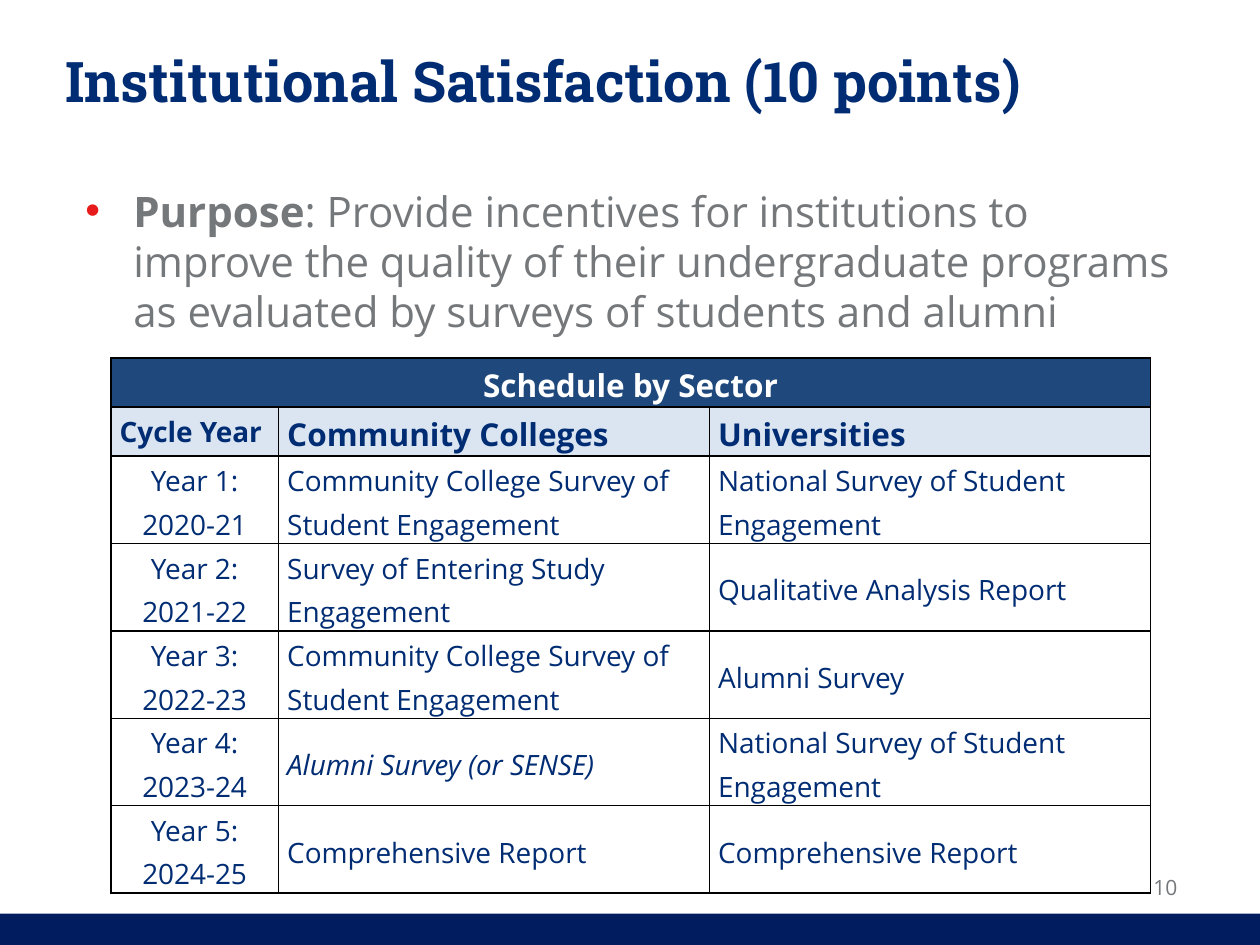
import pptx
import pptx.util
import pptx.dml.color
import pptx.enum.shapes
import pptx.enum.text
import pptx.oxml
import pptx.oxml.ns
from pptx.util import Inches

RGBColor = pptx.dml.color.RGBColor
ALIGN = pptx.enum.text.PP_ALIGN
ANCHOR = pptx.enum.text.MSO_ANCHOR

NAVY = RGBColor(0x00, 0x2C, 0x73)
FOOTER_NAVY = RGBColor(0x01, 0x1D, 0x5F)
GREY = RGBColor(0x75, 0x78, 0x7B)
WHITE = RGBColor(0xFF, 0xFF, 0xFF)
HEADER_BLUE = RGBColor(0x1F, 0x49, 0x7D)
PALE_BLUE = RGBColor(0xDB, 0xE5, 0xF1)
RED = RGBColor(0xE7, 0x1B, 0x1B)
BLACK = RGBColor(0x00, 0x00, 0x00)


def add_run(paragraph, text, size, color, name="Open Sans", bold=False, italic=False):
    run = paragraph.add_run()
    run.text = text
    run.font.color.rgb = color
    formats = {"size": pptx.util.Pt(size), "name": name, "bold": bold, "italic": italic}
    for attribute, value in formats.items():
        setattr(run.font, attribute, value)


def add_box(left, top, width, height, anchor):
    box = slide.shapes.add_textbox(Inches(left), Inches(top), Inches(width), Inches(height))
    box.text_frame.word_wrap = True
    box.text_frame.vertical_anchor = anchor
    return box.text_frame.paragraphs[0]


presentation = pptx.Presentation()
presentation.slide_width = Inches(10)
presentation.slide_height = Inches(7.5)
slide = presentation.slides.add_slide(presentation.slide_layouts[6])

# Page number and footer band
page_number = add_box(9, 6.83, 0.5, 0.42, ANCHOR.MIDDLE)
page_number.alignment = ALIGN.CENTER
add_run(page_number, "10", 12, GREY)

footer = slide.shapes.add_shape(
    pptx.enum.shapes.MSO_SHAPE.RECTANGLE, 0, Inches(7.25), Inches(10), Inches(0.25))
footer.shadow.inherit = False
footer.fill.solid()
footer.fill.fore_color.rgb = FOOTER_NAVY
footer.line.fill.background()

# Title
title = add_box(0.42, 0.01, 9, 1.25, ANCHOR.MIDDLE)
add_run(title, "Institutional Satisfaction (10 points)", 32, NAVY, "Roboto Slab", bold=True)

# Purpose bullet
purpose = add_box(0.58, 1.42, 9, 1.42, ANCHOR.TOP)
bullet = purpose._p.get_or_add_pPr()
bullet.set("marL", str(Inches(0.38)))
bullet.set("indent", str(-Inches(0.38)))
for element in (f'<a:buClr {{}}><a:srgbClr val="{RED}"/></a:buClr>',
                '<a:buFont {} typeface="Arial"/>',
                '<a:buChar {} char="•"/>'):
    bullet.append(pptx.oxml.parse_xml(element.format(pptx.oxml.ns.nsdecls("a"))))
add_run(purpose, "Purpose", 24, GREY, bold=True)
add_run(purpose, ": Provide incentives for institutions to improve the quality of their "
        "undergraduate programs as evaluated by surveys of students and alumni", 24, GREY)

# Survey schedule
CCSSE = "Community College Survey of Student Engagement"
NSSE = "National Survey of Student Engagement"
SENSE_OPTION = "Alumni Survey (or SENSE)"
schedule_rows = [
    ("Schedule by Sector", "", ""),
    ("Cycle Year", "Community Colleges", "Universities"),
    ("Year 1: 2020-21", CCSSE, NSSE),
    ("Year 2: 2021-22", "Survey of Entering Study Engagement", "Qualitative Analysis Report"),
    ("Year 3: 2022-23", CCSSE, "Alumni Survey"),
    ("Year 4: 2023-24", SENSE_OPTION, NSSE),
    ("Year 5: 2024-25", "Comprehensive Report", "Comprehensive Report"),
]
row_fills = {0: HEADER_BLUE, 1: PALE_BLUE}
schedule_height = 4.25
heading_height = 0.39
year_height = (schedule_height - 2 * heading_height) / 5
schedule = slide.shapes.add_table(
    len(schedule_rows), 3,
    Inches(0.88), Inches(2.84), Inches(8.25), Inches(schedule_height)).table
for column, width in zip(schedule.columns, (1.33, 3.42, 3.5)):
    column.width = Inches(width)
for row, height in zip(schedule.rows, [heading_height] * 2 + [year_height] * 5):
    row.height = Inches(height)
schedule.cell(0, 0).merge(schedule.cell(0, 2))

cell_format = {"margin_left": Inches(0.07), "margin_right": Inches(0.07),
               "margin_top": 0, "margin_bottom": 0}
for r, texts in enumerate(schedule_rows):
    for c, text in enumerate(texts):
        cell = schedule.cell(r, c)
        for attribute, value in cell_format.items():
            setattr(cell, attribute, value)
        cell.vertical_anchor = ANCHOR.MIDDLE if r > 1 else ANCHOR.TOP

        # Borders come before the fill in the cell properties
        for side in ("lnL", "lnR", "lnT", "lnB"):
            cell._tc.get_or_add_tcPr().append(pptx.oxml.parse_xml(
                f'<a:{side} {pptx.oxml.ns.nsdecls("a")} w="{pptx.util.Pt(1)}"><a:solidFill>'
                f'<a:srgbClr val="{BLACK}"/></a:solidFill></a:{side}>'))
        if r in row_fills:
            cell.fill.solid()
            cell.fill.fore_color.rgb = row_fills[r]
        else:
            cell.fill.background()

        if text:
            entry = cell.text_frame.paragraphs[0]
            entry.line_spacing = 1.15
            entry.alignment = ALIGN.CENTER if c == 0 and r != 1 else ALIGN.LEFT
            size = 18 if r == 0 or (r == 1 and c > 0) else 16
            add_run(entry, text, size, WHITE if r == 0 else NAVY,
                    bold=r < 2, italic=text == SENSE_OPTION)

presentation.save("out.pptx")
